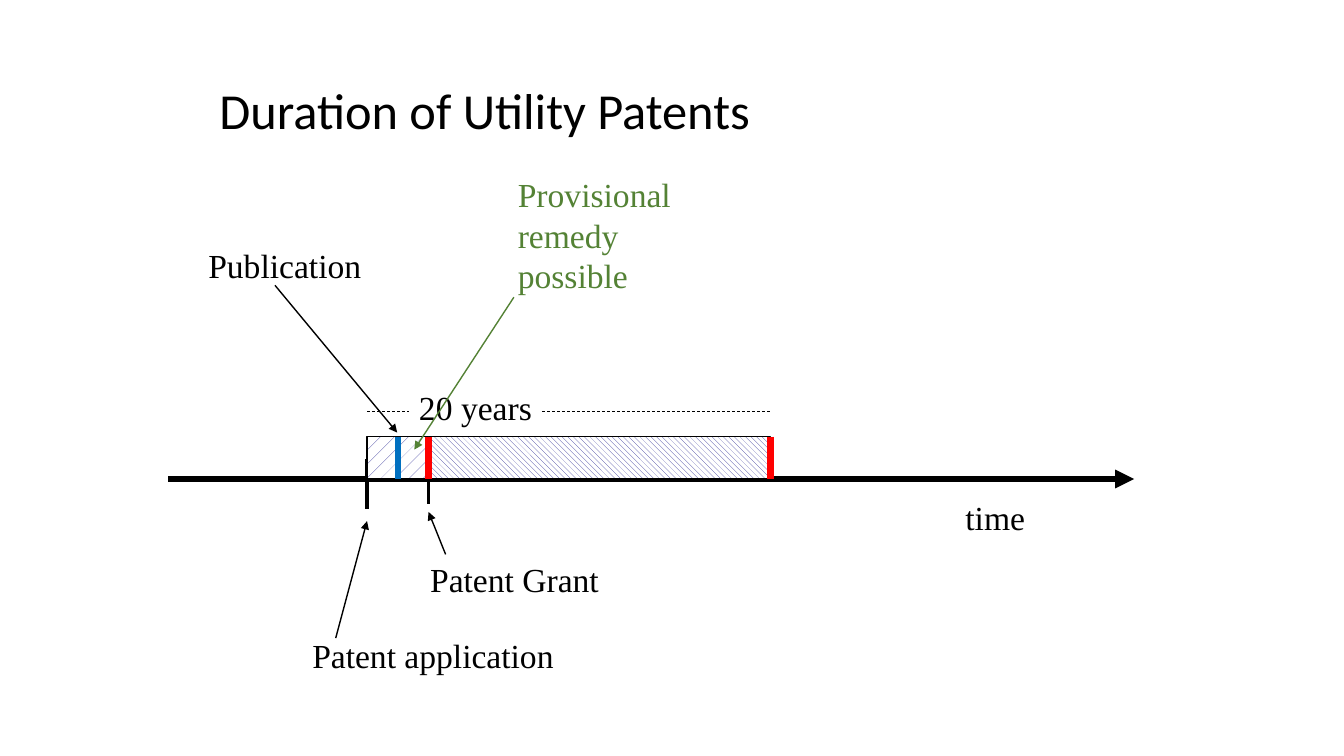
from pptx import Presentation
from pptx.dml.color import RGBColor
from pptx.enum.dml import MSO_LINE, MSO_PATTERN
from pptx.enum.shapes import MSO_CONNECTOR, MSO_SHAPE
from pptx.enum.text import MSO_ANCHOR, MSO_AUTO_SIZE
from pptx.oxml.ns import qn
from pptx.util import Cm, Pt
from lxml.etree import SubElement

COLORS = {"ink": "000000", "paper": "FFFFFF", "hatch": "333399",
          "limit": "FF0000", "publication": "0070C0", "remedy": "548235"}
TITLE = "Duration of Utility Patents"
APPLICATION, PUBLICATION, GRANT, EXPIRY = 9.25, 10.03, 10.8, 19.41
BAR_TOP, AXIS = 11, 12.07
DURATION_Y = 10.36
TICK = 1.27

PERIODS = [
    (GRANT, EXPIRY, MSO_PATTERN.WIDE_DOWNWARD_DIAGONAL),
    (APPLICATION, GRANT, MSO_PATTERN.PERCENT_5),
]
TICKS = [(APPLICATION, 11.56), (GRANT, 11.43)]
MARKERS = [(EXPIRY, "limit"), (GRANT, "limit"), (PUBLICATION, "publication")]
DURATION_LINES = [(APPLICATION, 10.31), (13.67, EXPIRY)]
LABELS = [
    ("time", 24.08, 12.4, 2.01, 1.27, False, "ink"),
    ("Patent application", 7.62, 15.88, 6.6, 1.27, False, "ink"),
    ("Patent Grant", 10.59, 13.97, 4.78, 1.27, False, "ink"),
    ("20 years", 10.31, 9.63, 3.35, 1.27, False, "ink"),
    ("Publication", 5, 6.05, 4.39, 1.27, False, "ink"),
    ("Provisional remedy possible", 12.8, 4.27, 4.57, 3.33, True, "remedy"),
]
POINTERS = [
    (8.46, 16.08, APPLICATION, 13.13, "ink"),
    (11.23, 13.97, GRANT, 12.9, "ink"),
    (6.93, 7.19, 10.01, 10.9, "ink"),
    (12.95, 7.49, 10.44, 11.33, "remedy"),
]


def color(name):
    return RGBColor.from_string(COLORS[name])


def add_text(slide, text, left, top, width, height, wrap, ink, font="Times New Roman", size=24):
    box = slide.shapes.add_textbox(Cm(left), Cm(top), Cm(width), Cm(height))
    frame = box.text_frame
    frame.word_wrap = wrap
    frame.auto_size = MSO_AUTO_SIZE.SHAPE_TO_FIT_TEXT
    run = frame.paragraphs[0].add_run()
    run.text = text
    run.font.name = font
    run.font.size = Pt(size)
    run.font.color.rgb = color(ink)
    return frame


def add_line(slide, x1, y1, x2, y2, ink, width, arrow=False, dash=None):
    connector = slide.shapes.add_connector(MSO_CONNECTOR.STRAIGHT, Cm(x1), Cm(y1), Cm(x2), Cm(y2))
    connector.line.color.rgb = color(ink)
    connector.line.width = Pt(width)
    if dash:
        connector.line.dash_style = dash
    properties = connector.element.spPr
    if arrow:
        SubElement(properties.find(qn("a:ln")), qn("a:tailEnd"), type="triangle")
    SubElement(properties, qn("a:effectLst"))


def add_period(slide, start, end, pattern):
    bar = slide.shapes.add_shape(MSO_SHAPE.RECTANGLE, Cm(start), Cm(BAR_TOP),
                                 Cm(end - start), Cm(AXIS - BAR_TOP))
    bar.shadow.inherit = False
    bar.fill.patterned()
    bar.fill.pattern = pattern
    bar.fill.fore_color.rgb = color("hatch")
    bar.fill.back_color.rgb = color("paper")
    bar.line.color.rgb = color("ink")
    bar.line.width = Pt(1)


def main():
    """Build the patent duration timeline slide."""
    presentation = Presentation()
    presentation.slide_width, presentation.slide_height = Cm(33.87), Cm(19.05)
    slide = presentation.slides.add_slide(presentation.slide_layouts[6])

    title = add_text(slide, TITLE, 5.28, 1.27, 24.13, 3.18, True, "ink", "Calibri", 36)
    title.auto_size = MSO_AUTO_SIZE.NONE
    title.vertical_anchor = MSO_ANCHOR.MIDDLE
    title.paragraphs[0].line_spacing = 0.9

    add_line(slide, 4.24, AXIS, 28.58, AXIS, "ink", 4.5, arrow=True)
    for x, top in TICKS:
        add_line(slide, x, top, x, top + TICK, "ink", 2.25)
    for period in PERIODS:
        add_period(slide, *period)
    for start, end in DURATION_LINES:
        add_line(slide, start, DURATION_Y, end, DURATION_Y, "ink", 0.5, dash=MSO_LINE.DASH)
    for x, ink in MARKERS:
        add_line(slide, x, BAR_TOP, x, AXIS, ink, 5)
    for label in LABELS:
        add_text(slide, *label)
    for pointer in POINTERS:
        add_line(slide, *pointer, 1, arrow=True)

    presentation.save("out.pptx")


if __name__ == "__main__":
    main()
